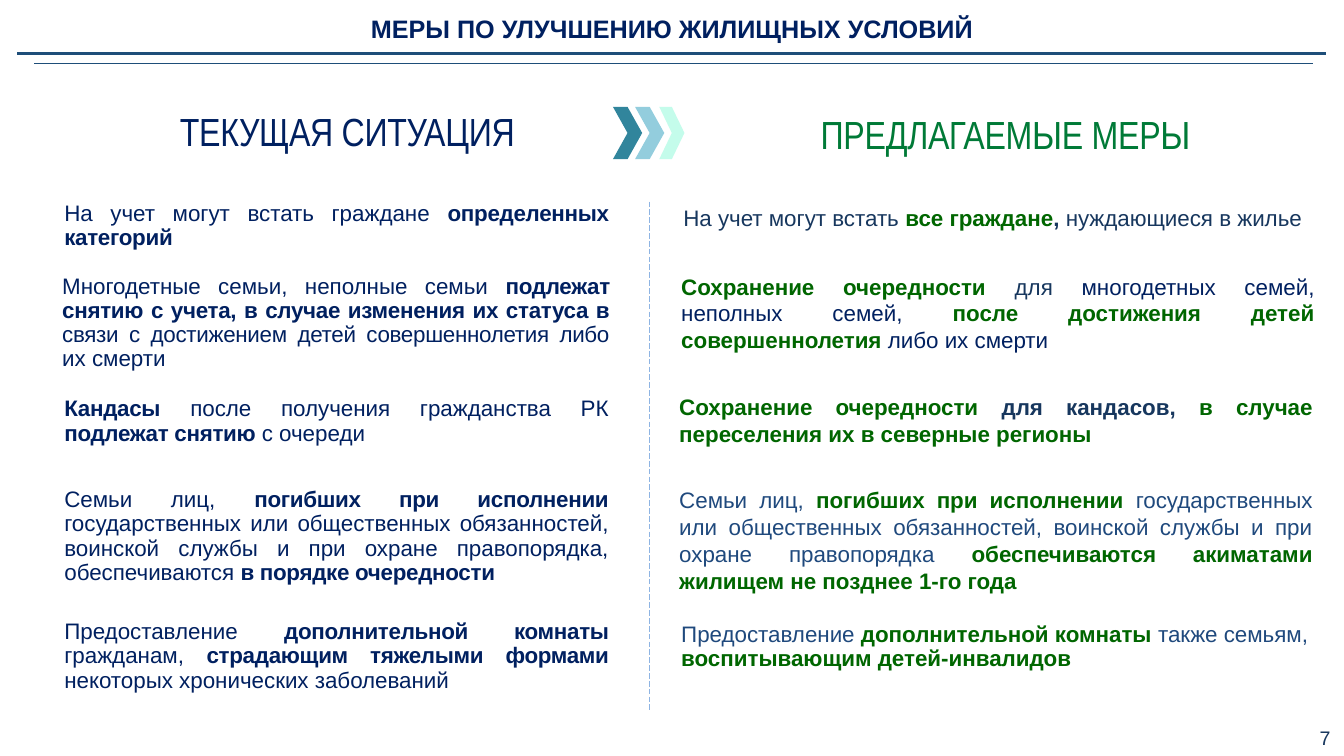
from typing import NamedTuple

from lxml.etree import SubElement
from pptx import Presentation
from pptx.dml.color import RGBColor
from pptx.enum.dml import MSO_LINE_DASH_STYLE as Dash
from pptx.enum.shapes import MSO_CONNECTOR_TYPE as Connector, MSO_SHAPE as Preset
from pptx.enum.text import MSO_ANCHOR as Anchor, PP_ALIGN as Align
from pptx.oxml.ns import qn
from pptx.shapes.shapetree import GroupShapes, SlideShapes
from pptx.util import Pt

NAVY = RGBColor(0x00, 0x20, 0x60)
SLATE = RGBColor(0x17, 0x37, 0x5E)
BLUE = RGBColor(0x1F, 0x49, 0x7D)
GREEN = RGBColor(0x00, 0x66, 0x00)
HEADING_GREEN = RGBColor(0x00, 0x7A, 0x37)
RULE_BLUE = RGBColor(0x1E, 0x4E, 0x79)
DIVIDER_BLUE = RGBColor(0x8E, 0xB4, 0xE3)
TEAL = RGBColor(0x31, 0x85, 0x9C)
SKY = RGBColor(0x93, 0xCD, 0xDD)
MINT = RGBColor(0xC4, 0xFC, 0xEB)


class Style(NamedTuple):
    color: RGBColor
    bold: bool = False
    size: float = 16
    font: str = "Arial"
    spacing: float = 0


class Layout(NamedTuple):
    align: Align = Align.JUSTIFY
    anchor: Anchor = Anchor.MIDDLE
    line_spacing: float = 1
    before: float = 0
    after: float = 0
    insets: tuple[float, float, float, float] = (7.2, 3.6, 7.2, 3.6)


class Block(NamedTuple):
    left: float
    top: float
    width: float
    height: float
    layout: Layout
    runs: list[tuple[str, Style]]


class Line(NamedTuple):
    start: tuple[float, float]
    end: tuple[float, float]
    color: RGBColor
    width: float
    dash: Dash | None = None


class Chevron(NamedTuple):
    left: float
    width: float
    color: RGBColor


PLAIN = Style(NAVY)
STRONG = Style(NAVY, bold=True, spacing=-0.2)
SLATE_PLAIN = Style(SLATE)
SLATE_STRONG = Style(SLATE, bold=True)
BLUE_PLAIN = Style(BLUE)
ACCENT = Style(GREEN, bold=True)
HEADING = Style(NAVY, size=28, font="Arial Narrow", spacing=-0.2)

CURRENT = Layout(line_spacing=0.9, before=10)
PROPOSED = Layout(after=6)
PROPOSED_LAST = Layout(Align.LEFT, line_spacing=0.9, before=10)
COLUMN_HEADING = Layout(Align.CENTER, Anchor.BOTTOM, 0.9, 0.9, insets=(0, 1.44, 0, 0))
TITLE = Layout(Align.CENTER, insets=(5, 2.9, 5, 2.9))
NUMBER = Layout(Align.RIGHT, insets=(9.4, 5, 9.4, 5))

CURRENT_WIDTH, PROPOSED_WIDTH, ROW_HEIGHT = 403.2, 466.6, 59.8

BLOCKS = [
    Block(0, 2.9, 960, 34.6, TITLE,
          [("МЕРЫ ПО УЛУЧШЕНИЮ ЖИЛИЩНЫХ УСЛОВИЙ", Style(NAVY, True, 18))]),
    Block(920.9, 513.4, 38.9, 26.6, NUMBER, [("7", Style(SLATE, size=14))]),
    Block(560.2, 81.4, 316, 31.7, COLUMN_HEADING,
          [("ПРЕДЛАГАЕМЫЕ МЕРЫ", HEADING._replace(color=HEADING_GREEN))]),
    Block(77.8, 79.2, 340.6, 31.7, COLUMN_HEADING, [("ТЕКУЩАЯ СИТУАЦИЯ", HEADING)]),
    Block(38.9, 131.8, CURRENT_WIDTH, ROW_HEIGHT, CURRENT, [
        ("На учет могут встать граждане ", PLAIN),
        ("определенных категорий", STRONG)]),
    Block(481, 125.3, PROPOSED_WIDTH, ROW_HEIGHT, PROPOSED, [
        ("На учет могут встать ", SLATE_PLAIN),
        ("все граждане", ACCENT),
        (", ", SLATE_STRONG),
        ("нуждающиеся в жилье", SLATE_PLAIN)]),
    Block(37.4, 200.9, 405.4, ROW_HEIGHT, CURRENT, [
        ("Многодетные семьи, неполные семьи ", PLAIN),
        ("подлежат снятию с учета, в случае изменения их статуса в ", STRONG),
        ("связи с достижением детей совершеннолетия либо", PLAIN._replace(spacing=-0.2)),
        (" их смерти", PLAIN)]),
    Block(479.5, 193.7, PROPOSED_WIDTH, ROW_HEIGHT, PROPOSED, [
        ("Сохранение очередности ", ACCENT),
        ("для ", SLATE_PLAIN),
        ("многодетных семей, неполных семей, ", PLAIN),
        ("после достижения детей совершеннолетия ", ACCENT),
        ("либо их смерти", PLAIN)]),
    Block(38.9, 271.4, CURRENT_WIDTH, ROW_HEIGHT, CURRENT, [
        ("Кандасы", STRONG),
        (" после получения гражданства РК ", PLAIN),
        ("подлежат снятию ", STRONG),
        ("с очереди", PLAIN)]),
    Block(478.1, 270, PROPOSED_WIDTH, ROW_HEIGHT, PROPOSED, [
        ("Сохранение очередности ", ACCENT),
        ("для кандасов, ", SLATE_STRONG),
        ("в случае переселения их в северные регионы", ACCENT)]),
    Block(38.9, 353.5, CURRENT_WIDTH, ROW_HEIGHT, CURRENT, [
        ("Семьи лиц, ", PLAIN),
        ("погибших при исполнении", STRONG),
        (" государственных или общественных обязанностей, воинской службы "
         "и при охране правопорядка, обеспечиваются ", PLAIN),
        ("в порядке очередности", STRONG)]),
    Block(478.1, 355.7, PROPOSED_WIDTH, ROW_HEIGHT, PROPOSED, [
        ("Семьи лиц, ", BLUE_PLAIN),
        ("погибших при исполнении ", ACCENT),
        ("государственных или общественных обязанностей, воинской службы "
         "и при охране правопорядка ", BLUE_PLAIN),
        ("обеспечиваются акиматами жилищем не позднее 1-го года", ACCENT)]),
    Block(38.9, 439.2, CURRENT_WIDTH, ROW_HEIGHT, CURRENT, [
        ("Предоставление ", PLAIN),
        ("дополнительной комнаты ", STRONG),
        ("гражданам, ", PLAIN),
        ("страдающим тяжелыми формами ", STRONG),
        ("некоторых хронических заболеваний", PLAIN)]),
    Block(479.5, 432.7, PROPOSED_WIDTH, ROW_HEIGHT, PROPOSED_LAST, [
        ("Предоставление ", BLUE_PLAIN),
        ("дополнительной комнаты ", ACCENT),
        ("также семьям, ", BLUE_PLAIN),
        ("воспитывающим детей-инвалидов", ACCENT)]),
]

TITLE_RULES = [
    Line((12.2, 38.2), (947.5, 38.2), RULE_BLUE, 2.25),
    Line((24.5, 45.4), (938.2, 45.4), RULE_BLUE, 1),
]
DIVIDER = Line((463.7, 144), (463.7, 508.3), DIVIDER_BLUE, 0.5, Dash.LONG_DASH)
CHEVRONS = [Chevron(437.8, 20.9, TEAL), Chevron(453.6, 20.9, SKY), Chevron(470.9, 18, MINT)]
CHEVRON_TOP, CHEVRON_HEIGHT = 76.3, 37.4


def draw_block(shapes: SlideShapes, block: Block) -> None:
    box = shapes.add_textbox(Pt(block.left), Pt(block.top), Pt(block.width), Pt(block.height))
    frame, layout = box.text_frame, block.layout
    frame.word_wrap = True
    frame.vertical_anchor = layout.anchor
    (frame.margin_left, frame.margin_top,
     frame.margin_right, frame.margin_bottom) = map(Pt, layout.insets)
    paragraph = frame.paragraphs[0]
    paragraph.alignment = layout.align
    paragraph.line_spacing = layout.line_spacing
    paragraph.space_before = Pt(layout.before)
    paragraph.space_after = Pt(layout.after)
    for text, style in block.runs:
        run = paragraph.add_run()
        run.text = text
        run.font.name = style.font
        run.font.size = Pt(style.size)
        run.font.bold = style.bold
        run.font.color.rgb = style.color
        if style.spacing:
            run._r.get_or_add_rPr().set("spc", str(round(style.spacing * 100)))


def draw_line(shapes: SlideShapes | GroupShapes, line: Line) -> None:
    connector = shapes.add_connector(
        Connector.STRAIGHT, *map(Pt, line.start), *map(Pt, line.end))
    connector.line.color.rgb = line.color
    connector.line.width = Pt(line.width)
    if line.dash is not None:
        connector.line.dash_style = line.dash
    SubElement(connector._element.spPr, qn("a:effectLst"))


def draw_chevron(shapes: GroupShapes, chevron: Chevron) -> None:
    shape = shapes.add_shape(Preset.CHEVRON, Pt(chevron.left), Pt(CHEVRON_TOP),
                             Pt(chevron.width), Pt(CHEVRON_HEIGHT))
    shape.shadow.inherit = False
    shape.fill.solid()
    shape.fill.fore_color.rgb = chevron.color
    shape.line.fill.background()


def main() -> None:
    presentation = Presentation()
    presentation.slide_width, presentation.slide_height = Pt(960), Pt(540)
    slide = presentation.slides.add_slide(presentation.slide_layouts[6])
    title_rules = slide.shapes.add_group_shape()
    for line in TITLE_RULES:
        draw_line(title_rules.shapes, line)
    draw_line(slide.shapes, DIVIDER)
    for block in BLOCKS:
        draw_block(slide.shapes, block)
    arrow = slide.shapes.add_group_shape()
    for chevron in CHEVRONS:
        draw_chevron(arrow.shapes, chevron)
    presentation.save("out.pptx")


if __name__ == "__main__":
    main()
